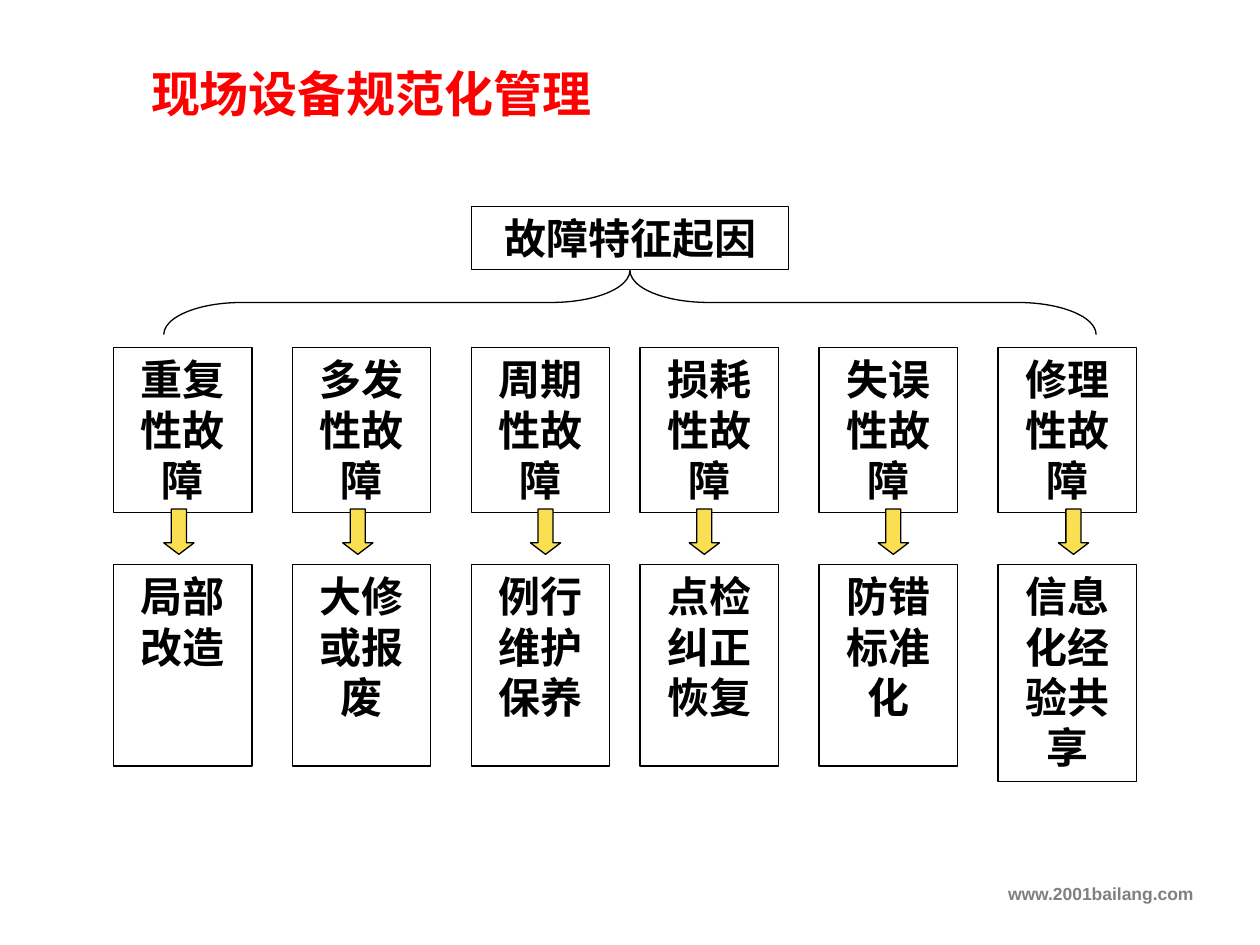
from pptx import Presentation
from pptx.dml.color import RGBColor
from pptx.enum.shapes import MSO_SHAPE
from pptx.enum.text import MSO_ANCHOR, MSO_AUTO_SIZE, PP_ALIGN
from pptx.util import Inches, Pt

COLS, ROWS = 100, 75
WIDE, HIGH = Inches(10), Inches(7.5)
BLACK, RED, GRAY, GOLD = "000000", "FF0000", "808080", "FBDF53"

STEP, SHIFT = 14.2, 0.8
PAIRS = [
    ("重复性故障", "局部改造", 4),
    ("多发性故障", "大修或报废", 4),
    ("周期性故障", "例行维护保养", 4.7),
    ("损耗性故障", "点检纠正恢复", 3.9),
    ("失误性故障", "防错标准化", 4.7),
    ("修理性故障", "信息化经验共享", 4.8),
]


def color(code):
    return RGBColor.from_string(code)


def grid(left, top, width, height):
    return (
        round(WIDE * left / COLS),
        round(HIGH * top / ROWS),
        round(WIDE * width / COLS),
        round(HIGH * height / ROWS),
    )


def apply(item, values):
    for name, value in values.items():
        setattr(item, name, value)


def write(shape, text, size, code, align, anchor=MSO_ANCHOR.TOP, grow=False):
    frame = shape.text_frame
    fit = MSO_AUTO_SIZE.SHAPE_TO_FIT_TEXT if grow else MSO_AUTO_SIZE.NONE
    apply(frame, {"word_wrap": True, "auto_size": fit, "vertical_anchor": anchor})
    para = frame.paragraphs[0]
    para.alignment = align
    run = para.add_run()
    run.text = text
    apply(run.font, {"name": "Arial", "size": Pt(size), "bold": True})
    run.font.color.rgb = color(code)


def label(slide, place, *style):
    write(slide.shapes.add_textbox(*grid(*place)), *style)


def draw(slide, kind, place, fill=None, adjust=(), turn=0):
    shape = slide.shapes.add_shape(kind, *grid(*place))
    shape.shadow.inherit = False
    if fill:
        shape.fill.solid()
        shape.fill.fore_color.rgb = color(fill)
    else:
        shape.fill.background()
    shape.line.color.rgb = color(BLACK)
    shape.line.width = Pt(0.75)
    for index, value in enumerate(adjust):
        shape.adjustments[index] = value
    shape.rotation = turn
    return shape


def box(slide, place, text, grow=True):
    shape = draw(slide, MSO_SHAPE.RECTANGLE, place)
    write(shape, text, 24, BLACK, PP_ALIGN.CENTER, grow=grow)


def arrow(slide, left):
    draw(slide, MSO_SHAPE.DOWN_ARROW, (left, 40.4, 2.4, 3.6), GOLD, (0.5, 0.38))


def main():
    deck = Presentation()
    apply(deck, {"slide_width": WIDE, "slide_height": HIGH})
    slide = deck.slides.add_slide(deck.slide_layouts[6])

    label(slide, (0, 69.6, 95.7, 3.5), "www.2001bailang.com", 10, GRAY, PP_ALIGN.RIGHT)
    label(slide, (11, 4, 68.2, 6.8), "现场设备规范化管理", 28, RED,
          PP_ALIGN.LEFT, MSO_ANCHOR.MIDDLE)
    box(slide, (37.4, 16.4, 25.2, 5), "故障特征起因")
    draw(slide, MSO_SHAPE.RIGHT_BRACE, (47.45, -13, 5.1, 74),
         adjust=(1.22, 0.5), turn=270)

    half, last = len(PAIRS) // 2, len(PAIRS) - 1
    for index, (cause, remedy, inset) in enumerate(PAIRS):
        left = 9 + STEP * index - SHIFT * (index >= half)
        tall = index == last
        box(slide, (left, 27.6, 11, 13.1), cause)
        box(slide, (left, 44.8, 11, 17.2 if tall else 16), remedy, tall)
        arrow(slide, left + inset)

    deck.save("out.pptx")


if __name__ == "__main__":
    main()
